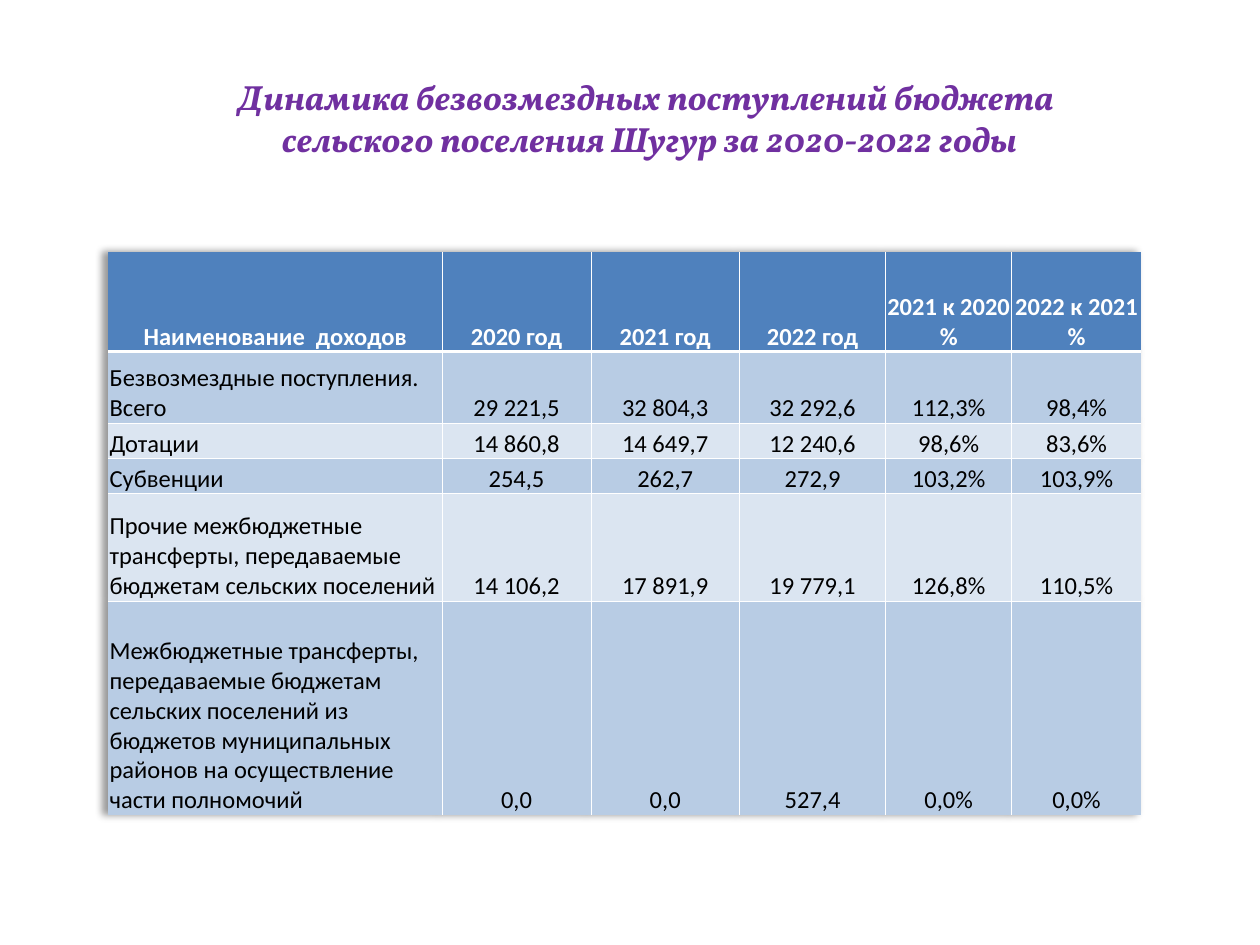
import pptx
import pptx.util
import pptx.dml.color
import pptx.enum.text
import pptx.oxml
import pptx.oxml.ns
from pptx.util import Inches

ALIGN = pptx.enum.text.PP_ALIGN
ANCHOR = pptx.enum.text.MSO_ANCHOR
NO_STYLE = "{2D5ABB26-0587-4C30-8999-92F81FD0307C}"
HEADER_FILL = "4F81BD"
BAND_FILLS = ["DBE5F1", "B8CCE4"]
TITLE_FONT = {"name": "Vollkorn", "size": pptx.util.Pt(20), "bold": True, "italic": True}
HEADER_FONT = {"name": "Calibri", "size": pptx.util.Pt(14), "bold": True}
BODY_FONT = {**HEADER_FONT, "bold": False}
CELL_FORMAT = {
    "margin_left": Inches(0.01),
    "margin_right": Inches(0.01),
    "margin_top": Inches(0.01),
    "margin_bottom": 0,
    "vertical_anchor": ANCHOR.BOTTOM,
}
TITLE = [
    "Динамика безвозмездных поступлений бюджета ",
    "сельского поселения Шугур за 2020-2022 годы",
]
COL_WIDTHS = [2.65, 1.18, 1.18, 1.16, 1, 1.03]
ROW_HEIGHTS = [0.28, 0.79, 0.57, 0.28, 0.28, 0.85, 1.7]
ROWS = [
    ["Наименование  доходов", "2020 год", "2021 год", "2022 год",
     "2021 к 2020 %", "2022 к 2021 %"],
    ["Безвозмездные поступления. Всего",
     "29 221,5", "32 804,3", "32 292,6", "112,3%", "98,4%"],
    ["Дотации", "14 860,8", "14 649,7", "12 240,6", "98,6%", "83,6%"],
    ["Субвенции", "254,5", "262,7", "272,9", "103,2%", "103,9%"],
    ["Прочие межбюджетные трансферты, передаваемые бюджетам сельских поселений",
     "14 106,2", "17 891,9", "19 779,1", "126,8%", "110,5%"],
    ["Межбюджетные трансферты, передаваемые бюджетам сельских поселений "
     "из бюджетов муниципальных районов на осуществление части полномочий",
     "0,0", "0,0", "527,4", "0,0%", "0,0%"],
]


def color(value):
    return pptx.dml.color.RGBColor.from_string(value)


def apply(target, values):
    for name, value in values.items():
        setattr(target, name, value)


def write(p, text, font, hex_color, align):
    p.alignment = align
    r = p.add_run()
    r.text = text
    apply(r.font, font)
    r.font.color.rgb = color(hex_color)


def add_title(s):
    sp = s.shapes.title
    apply(sp, {"left": Inches(1.09), "top": Inches(0.55),
               "width": Inches(8.13), "height": Inches(0.77)})
    tf = sp.text_frame
    apply(tf, {"word_wrap": True, "vertical_anchor": ANCHOR.TOP,
               "auto_size": pptx.enum.text.MSO_AUTO_SIZE.SHAPE_TO_FIT_TEXT})
    for i, line in enumerate(TITLE):
        p = tf.add_paragraph() if i else tf.paragraphs[0]
        p.space_before = 0
        write(p, line, TITLE_FONT, "7030A0", ALIGN.CENTER)


def add_border(cell, side, points):
    cell._tc.get_or_add_tcPr().append(pptx.oxml.parse_xml(
        f'<a:ln{side} {pptx.oxml.ns.nsdecls("a")} w="{int(points * 12700)}">'
        '<a:solidFill><a:srgbClr val="FFFFFF"/></a:solidFill>'
        f'</a:ln{side}>'))


def format_cell(cell, row, col, text):
    header = row == 0
    if col > 0:
        add_border(cell, "L", 0.5)
    if col < len(COL_WIDTHS) - 1:
        add_border(cell, "R", 0.5)
    if not header:
        add_border(cell, "T", 1.5 if row == 1 else 0.5)
    if row < len(ROWS) - 1:
        add_border(cell, "B", 1.5 if header else 0.5)
    cell.fill.solid()
    cell.fill.fore_color.rgb = color(HEADER_FILL if header else BAND_FILLS[row % 2])
    write(cell.text_frame.paragraphs[0], text,
          HEADER_FONT if header else BODY_FONT,
          "FFFFFF" if header else "000000",
          ALIGN.CENTER if header or col else ALIGN.LEFT)


def format_blank_cell(cell):
    cell.fill.background()
    end = cell.text_frame.paragraphs[0]._p.get_or_add_endParaRPr()
    end.set("sz", "1400")


def add_shadow(table):
    table._tbl.tblPr.insert(0, pptx.oxml.parse_xml(
        f'<a:effectLst {pptx.oxml.ns.nsdecls("a")}>'
        '<a:outerShdw blurRad="50800" dist="38100" dir="10800000" algn="r" rotWithShape="0">'
        '<a:srgbClr val="000000"><a:alpha val="40000"/></a:srgbClr>'
        '</a:outerShdw></a:effectLst>'))


def add_income_table(s):
    table = s.shapes.add_table(
        len(ROW_HEIGHTS), len(COL_WIDTHS), Inches(0.86), Inches(1.72),
        Inches(sum(COL_WIDTHS)), Inches(sum(ROW_HEIGHTS))).table
    tbl_pr = table._tbl.tblPr
    tbl_pr.find(pptx.oxml.ns.qn("a:tableStyleId")).text = NO_STYLE
    apply(table, {"first_row": False, "horz_banding": False})
    add_shadow(table)
    for column, width in zip(table.columns, COL_WIDTHS):
        column.width = Inches(width)
    for row, height in zip(table.rows, ROW_HEIGHTS):
        row.height = Inches(height)
    for cell in table.iter_cells():
        apply(cell, CELL_FORMAT)
    for col in range(len(COL_WIDTHS)):
        format_blank_cell(table.cell(0, col))
    for row, texts in enumerate(ROWS):
        for col, text in enumerate(texts):
            format_cell(table.cell(row + 1, col), row, col, text)


def main():
    prs = pptx.Presentation()
    apply(prs, {"slide_width": Inches(10), "slide_height": Inches(7.5)})
    s = prs.slides.add_slide(prs.slide_layouts[5])
    add_title(s)
    add_income_table(s)
    prs.save("out.pptx")


if __name__ == "__main__":
    main()
